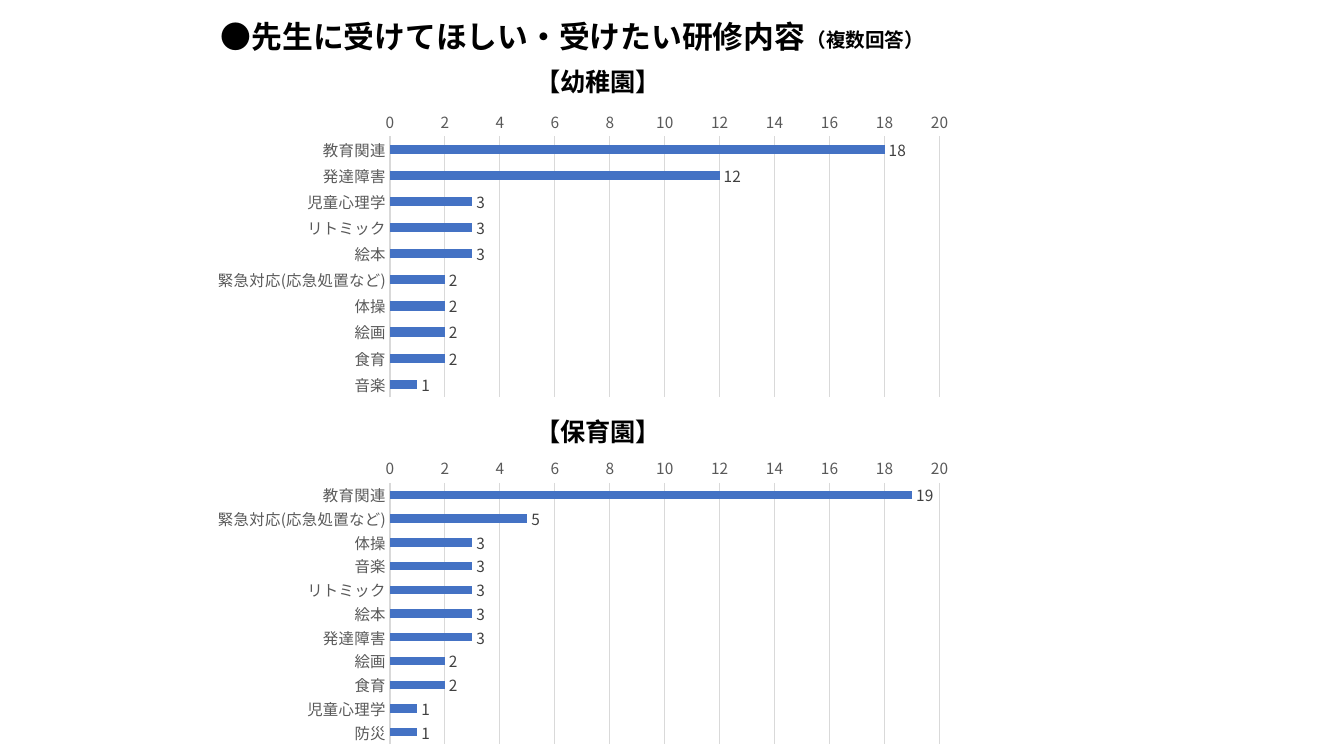
from dataclasses import dataclass

import pptx
import pptx.chart.data
import pptx.dml.color
import pptx.enum.chart
import pptx.enum.text
import pptx.oxml
import pptx.oxml.ns
import pptx.util
from pptx.util import Inches


@dataclass(frozen=True)
class Theme:
    font: str = "Noto Sans CJK JP"
    ink: str = "000000"
    axis_text: str = "595959"
    label_text: str = "404040"
    grid: str = "D9D9D9"
    bar: str = "4472C4"
    title_size: int = 22
    heading_size: int = 18
    note_size: int = 14
    chart_size: int = 10
    axis_size: int = 11
    hairline: float = 0.75


THEME = Theme()

KINDERGARTEN = {
    "教育関連": 18, "発達障害": 12, "児童心理学": 3, "リトミック": 3, "絵本": 3,
    "緊急対応(応急処置など)": 2, "体操": 2, "絵画": 2, "食育": 2, "音楽": 1,
}
NURSERY = {
    "教育関連": 19, "緊急対応(応急処置など)": 5, "体操": 3, "音楽": 3, "リトミック": 3,
    "絵本": 3, "発達障害": 3, "絵画": 2, "食育": 2, "児童心理学": 1, "防災": 1,
}


def rgb(code):
    return pptx.dml.color.RGBColor.from_string(code)


def style_font(font, size, color, bold=False):
    font.name = THEME.font
    font.size = pptx.util.Pt(size)
    font.bold = bold
    font.color.rgb = rgb(color)


def apply_east_asian_font(root):
    """Give Japanese glyphs the same typeface as the Latin ones."""
    for latin in list(root.iter(pptx.oxml.ns.qn("a:latin"))):
        latin.addnext(pptx.oxml.parse_xml(
            f'<a:ea {pptx.oxml.ns.nsdecls("a")} typeface="{THEME.font}"/>'))


def fill_text(box, text, size, align=pptx.enum.text.PP_ALIGN.LEFT):
    frame = box.text_frame
    frame.text = text
    frame.word_wrap = True
    frame.vertical_anchor = pptx.enum.text.MSO_ANCHOR.TOP
    frame.auto_size = pptx.enum.text.MSO_AUTO_SIZE.SHAPE_TO_FIT_TEXT
    para = frame.paragraphs[0]
    para.alignment = align
    style_font(para.runs[0].font, size, THEME.ink, bold=True)


def add_title(page, left, top):
    title = page.shapes.title
    title.left, title.top = Inches(left), Inches(top)
    title.width, title.height = Inches(6.05), Inches(0.47)
    fill_text(title, "●先生に受けてほしい・受けたい研修内容", THEME.title_size)
    note = page.shapes.add_textbox(
        Inches(left + 5.81), Inches(top + 0.1), Inches(2.26), Inches(0.34))
    fill_text(note, "（複数回答）", THEME.note_size)


def set_plot_layout(chart, x, y, width, height):
    """Fix the inner plot area as fractions of the chart."""
    plot_area = chart._chartSpace.chart.plotArea
    for old in plot_area.findall(pptx.oxml.ns.qn("c:layout")):
        plot_area.remove(old)
    plot_area.insert(0, pptx.oxml.parse_xml(
        f'<c:layout {pptx.oxml.ns.nsdecls("c")}><c:manualLayout>'
        '<c:layoutTarget val="inner"/><c:xMode val="edge"/><c:yMode val="edge"/>'
        f'<c:x val="{x}"/><c:y val="{y}"/><c:w val="{width}"/><c:h val="{height}"/>'
        '</c:manualLayout></c:layout>'))


def style_axes(chart):
    for axis in (chart.category_axis, chart.value_axis):
        axis.major_tick_mark = pptx.enum.chart.XL_TICK_MARK.NONE
        axis.minor_tick_mark = pptx.enum.chart.XL_TICK_MARK.NONE
        style_font(axis.tick_labels.font, THEME.axis_size, THEME.axis_text)
    categories, values = chart.category_axis, chart.value_axis
    categories.reverse_order = True
    values.minimum_scale, values.maximum_scale, values.major_unit = 0, 20, 2
    values.has_major_gridlines = True
    values.format.line.fill.background()
    for line in (categories.format.line, values.major_gridlines.format.line):
        line.color.rgb = rgb(THEME.grid)
        line.width = pptx.util.Pt(THEME.hairline)


def style_bars(plot):
    plot.gap_width = 182
    plot.vary_by_categories = False
    series = plot.series[0]
    series.format.fill.solid()
    series.format.fill.fore_color.rgb = rgb(THEME.bar)
    labels = series.data_labels
    labels.show_value = True
    labels.position = pptx.enum.chart.XL_LABEL_POSITION.OUTSIDE_END
    style_font(labels.font, THEME.axis_size, THEME.label_text)


def add_survey(page, heading, answers, left, top, heading_offset, plot_top):
    """Place one bar chart with its heading over the chart's upper margin."""
    box = page.shapes.add_textbox(
        Inches(left + 3.2), Inches(top + heading_offset), Inches(1.46), Inches(0.4))
    fill_text(box, heading, THEME.heading_size)

    chart_data = pptx.chart.data.CategoryChartData()
    chart_data.categories = answers.keys()
    chart_data.add_series("回答数", answers.values())
    chart = page.shapes.add_chart(
        pptx.enum.chart.XL_CHART_TYPE.BAR_CLUSTERED,
        Inches(left), Inches(top), Inches(8.15), Inches(3.88), chart_data).chart
    chart.has_legend = False
    chart.has_title = False
    style_font(chart.font, THEME.chart_size, THEME.ink)
    style_axes(chart)
    style_bars(chart.plots[0])
    set_plot_layout(chart, 0.228, plot_top, 0.669, 0.668)
    apply_east_asian_font(chart._chartSpace)


def build_training_page(deck):
    page = deck.slides.add_slide(deck.slide_layouts.get_by_name("Title Only"))
    add_title(page, 2.09, 0.13)
    add_survey(page, "【幼稚園】", KINDERGARTEN, 2.01, 0.44, 0.17, 0.235)
    add_survey(page, "【保育園】", NURSERY, 2.01, 3.95, 0.13, 0.217)
    apply_east_asian_font(page.shapes.element)


def main():
    deck = pptx.Presentation()
    deck.slide_width, deck.slide_height = Inches(13.33), Inches(7.5)
    build_training_page(deck)
    deck.save("out.pptx")


if __name__ == "__main__":
    main()
